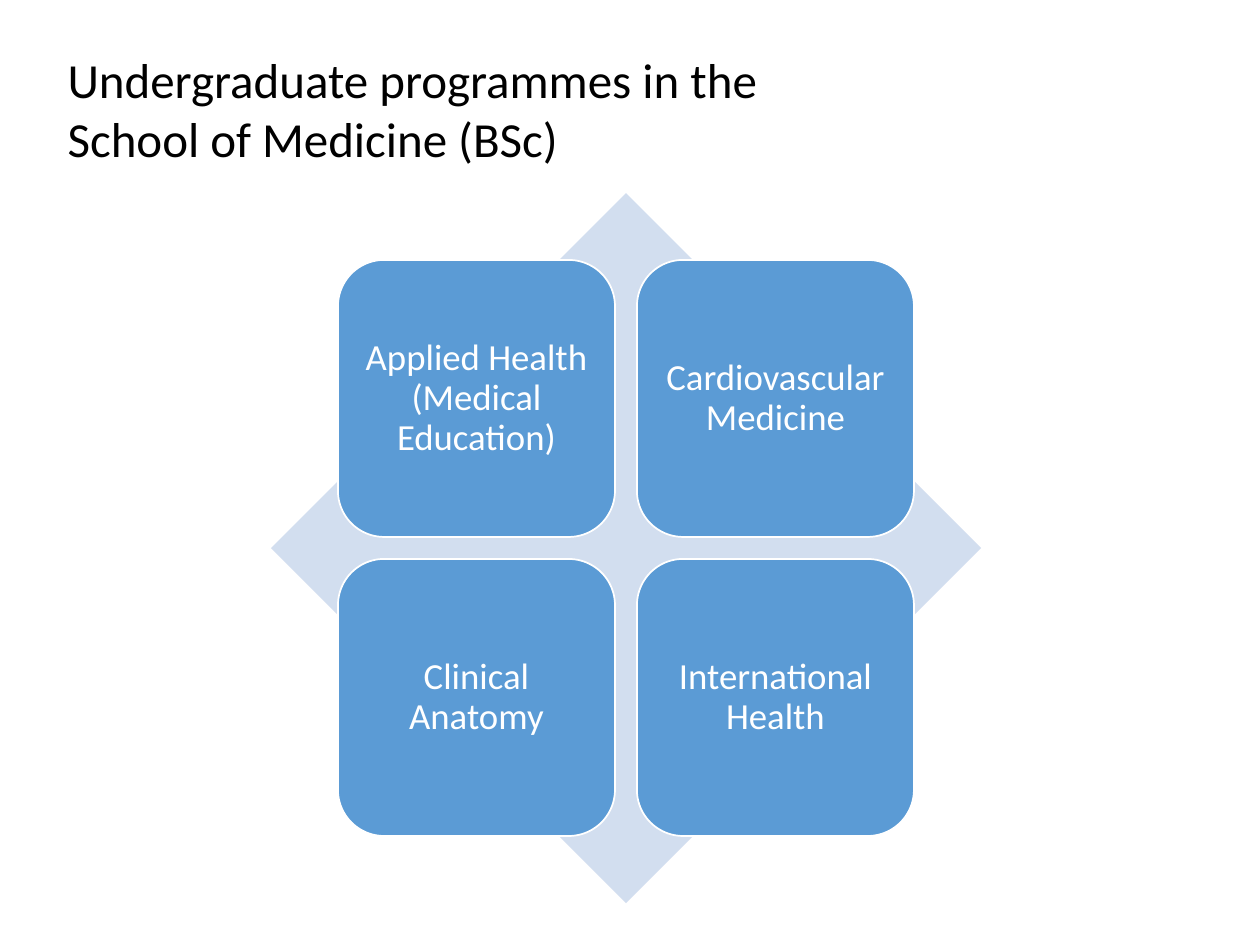
from pptx import Presentation
from pptx.dml.color import RGBColor
from pptx.enum.shapes import MSO_SHAPE
from pptx.enum.text import MSO_ANCHOR, MSO_AUTO_SIZE, PP_ALIGN
from pptx.util import Inches, Pt

TITLE = "Undergraduate programmes in the School of Medicine (BSc)"
PROGRAMMES = [
    ["Applied Health (Medical Education)", "Cardiovascular Medicine"],
    ["Clinical Anatomy", "International Health"],
]
FONT = "Calibri"
BLACK, WHITE, BLUE, PALE = "000000", "FFFFFF", "5B9BD5", "D2DEEF"
CENTRE_X, CENTRE_Y = 626, 548
DIAMOND, CARD, GAP, INSET = 710, 277, 22, 11


def px(n):
    return Inches(n / 126)


def rgb(code):
    return RGBColor.from_string(code)


def add_run(p, text, size, color):
    r = p.add_run()
    r.text = text
    r.font.name, r.font.size = FONT, Pt(size)
    r.font.color.rgb = rgb(color)


def add_filled(s, kind, x, y, size, fill):
    """Add a square-framed shape without shadow or outline."""
    sp = s.shapes.add_shape(kind, px(x), px(y), px(size), px(size))
    sp.shadow.inherit = False
    sp.fill.solid()
    sp.fill.fore_color.rgb = rgb(fill)
    sp.line.fill.background()
    return sp


def add_card(s, x, y, text):
    sp = add_filled(s, MSO_SHAPE.ROUNDED_RECTANGLE, x, y, CARD, BLUE)
    sp.line.color.rgb = rgb(WHITE)
    sp.line.width = Pt(1)
    tf = sp.text_frame
    tf.word_wrap = True
    tf.vertical_anchor = MSO_ANCHOR.MIDDLE
    tf.margin_left = tf.margin_right = tf.margin_top = tf.margin_bottom = px(INSET)
    p = tf.paragraphs[0]
    p.alignment = PP_ALIGN.CENTER
    p.line_spacing = 0.9
    add_run(p, text, 21, WHITE)


def main():
    prs = Presentation()
    prs.slide_width, prs.slide_height = px(1260), px(945)
    s = prs.slides.add_slide(prs.slide_layouts[5])

    title = s.shapes.title
    title.left, title.top, title.width, title.height = px(55), px(43), px(801), px(115)
    tf = title.text_frame
    tf.word_wrap = True
    tf.auto_size = MSO_AUTO_SIZE.NONE
    tf.vertical_anchor = MSO_ANCHOR.TOP
    p = tf.paragraphs[0]
    p.alignment = PP_ALIGN.LEFT
    add_run(p, TITLE, 28, BLACK)

    add_filled(s, MSO_SHAPE.DIAMOND, CENTRE_X - DIAMOND / 2,
               CENTRE_Y - DIAMOND / 2, DIAMOND, PALE)
    grid = 2 * CARD + GAP
    for row, names in enumerate(PROGRAMMES):
        for col, name in enumerate(names):
            add_card(s, CENTRE_X - grid / 2 + col * (CARD + GAP),
                     CENTRE_Y - grid / 2 + row * (CARD + GAP), name)

    prs.save("out.pptx")


if __name__ == "__main__":
    main()
